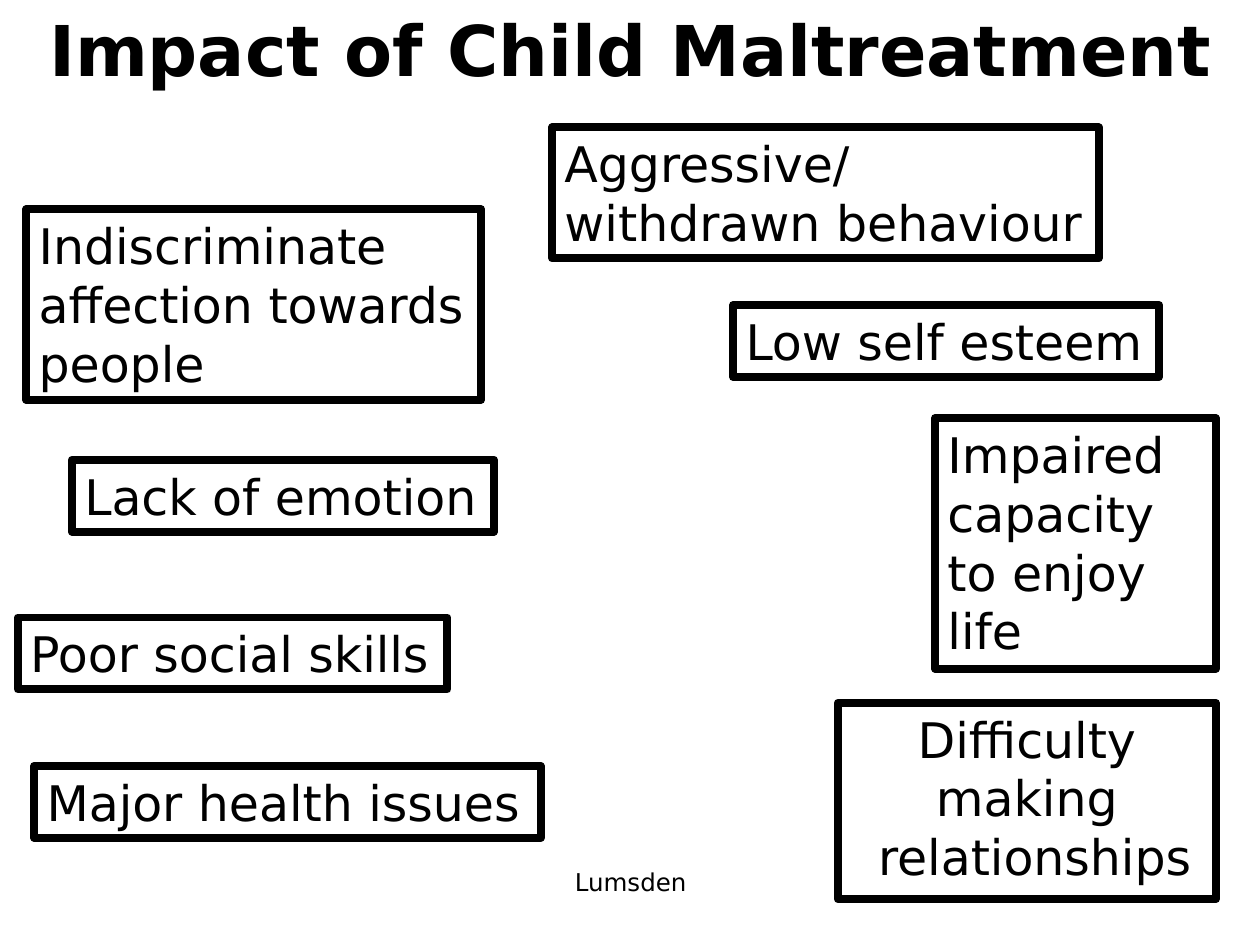
from pptx import Presentation
from pptx import util as u
from pptx.dml.color import RGBColor
from pptx.enum import shapes, text

FONT = "DejaVu Sans"
BLACK, WHITE = "000000", "FFFFFF"
LEFT, CENTRE = text.PP_ALIGN.LEFT, text.PP_ALIGN.CENTER

IMPACTS = [
    ((11.13, 2.57, 11.02, 2.64), ["Aggressive/", "withdrawn behaviour"], LEFT, False),
    ((0.53, 4.22, 9.17, 3.84), ["Indiscriminate", "affection towards", "people"], LEFT, False),
    ((14.78, 6.15, 8.59, 1.45), ["Low self esteem"], LEFT, False),
    ((18.85, 8.43, 5.66, 5.05), ["Impaired capacity", "to enjoy life"], LEFT, True),
    ((1.45, 9.27, 8.51, 1.45), ["Lack of emotion"], LEFT, False),
    ((0.36, 12.45, 8.66, 1.45), ["Poor social skills"], LEFT, False),
    ((16.89, 14.17, 7.62, 3.96), ["Difficulty making", " relationships"], CENTRE, True),
    ((0.69, 15.44, 10.21, 1.45), ["Major health issues"], LEFT, False),
]


def rgb(value):
    """Turn a hex string into a colour."""
    return RGBColor.from_string(value)


def cm(box):
    """Turn a box in centimetres into lengths."""
    return [u.Cm(v) for v in box]


def write(sp, lines, size, align=LEFT, bold=False, wrap=True):
    """Fill a shape with one paragraph per line, set from the top."""
    tf = sp.text_frame
    tf.word_wrap = wrap
    tf.vertical_anchor = text.MSO_ANCHOR.TOP
    for i, line in enumerate(lines):
        p = tf.add_paragraph() if i else tf.paragraphs[0]
        p.alignment = align
        r = p.add_run()
        r.text = line
        r.font.name, r.font.size, r.font.bold = FONT, u.Pt(size), bold
        r.font.color.rgb = rgb(BLACK)


def outline(sp, colour, width):
    """Give a shape a solid outline."""
    sp.line.color.rgb = rgb(colour)
    sp.line.width = u.Pt(width)


def add_title(s, box, title):
    """Place the slide title in its placeholder."""
    sp = s.shapes.title
    sp.left, sp.top, sp.width, sp.height = cm(box)
    sp.fill.solid()
    sp.fill.fore_color.rgb = rgb(WHITE)
    outline(sp, WHITE, 3)
    write(sp, [title], 40, CENTRE, bold=True)
    sp.text_frame.auto_size = text.MSO_AUTO_SIZE.NONE


def add_impact(s, box, lines, align, wrap):
    """Place one outlined box that names an impact."""
    sp = s.shapes.add_shape(shapes.MSO_SHAPE.RECTANGLE, *cm(box))
    sp.shadow.inherit = False
    sp.fill.background()
    outline(sp, BLACK, 4.5)
    write(sp, lines, 28, align, wrap=wrap)
    sp.text_frame.auto_size = text.MSO_AUTO_SIZE.SHAPE_TO_FIT_TEXT


def add_footer(s, box, name):
    """Place the author's name at the foot of the slide."""
    write(s.shapes.add_textbox(*cm(box)), [name], 14, CENTRE)


def main():
    """Build and save the slide."""
    prs = Presentation()
    prs.slide_width, prs.slide_height = u.Cm(25.4), u.Cm(19.05)
    s = prs.slides.add_slide(prs.slide_layouts[5])
    add_title(s, (0, 0, 25.4, 3.68), "Impact of Child Maltreatment")
    for impact in IMPACTS:
        add_impact(s, *impact)
    add_footer(s, (8.69, 17.35, 8.05, 1.32), "Lumsden")
    prs.save("out.pptx")


if __name__ == "__main__":
    main()
